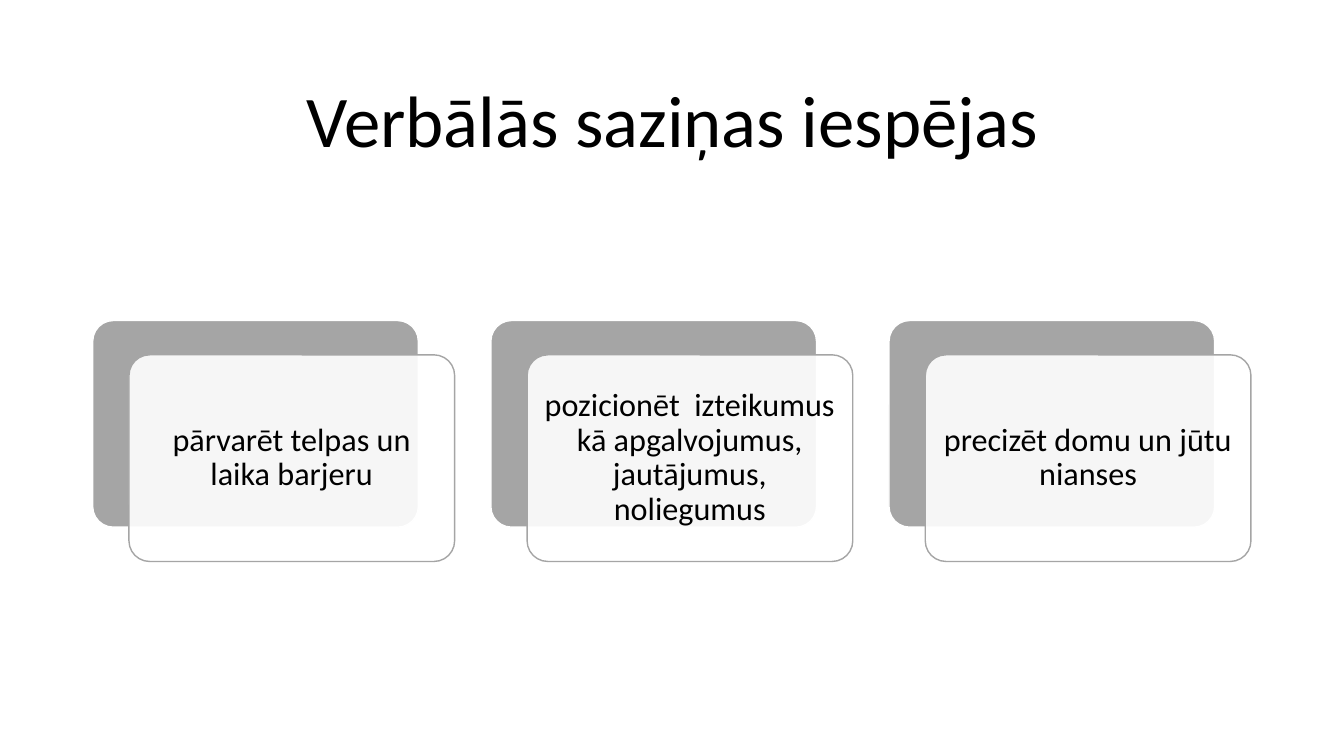
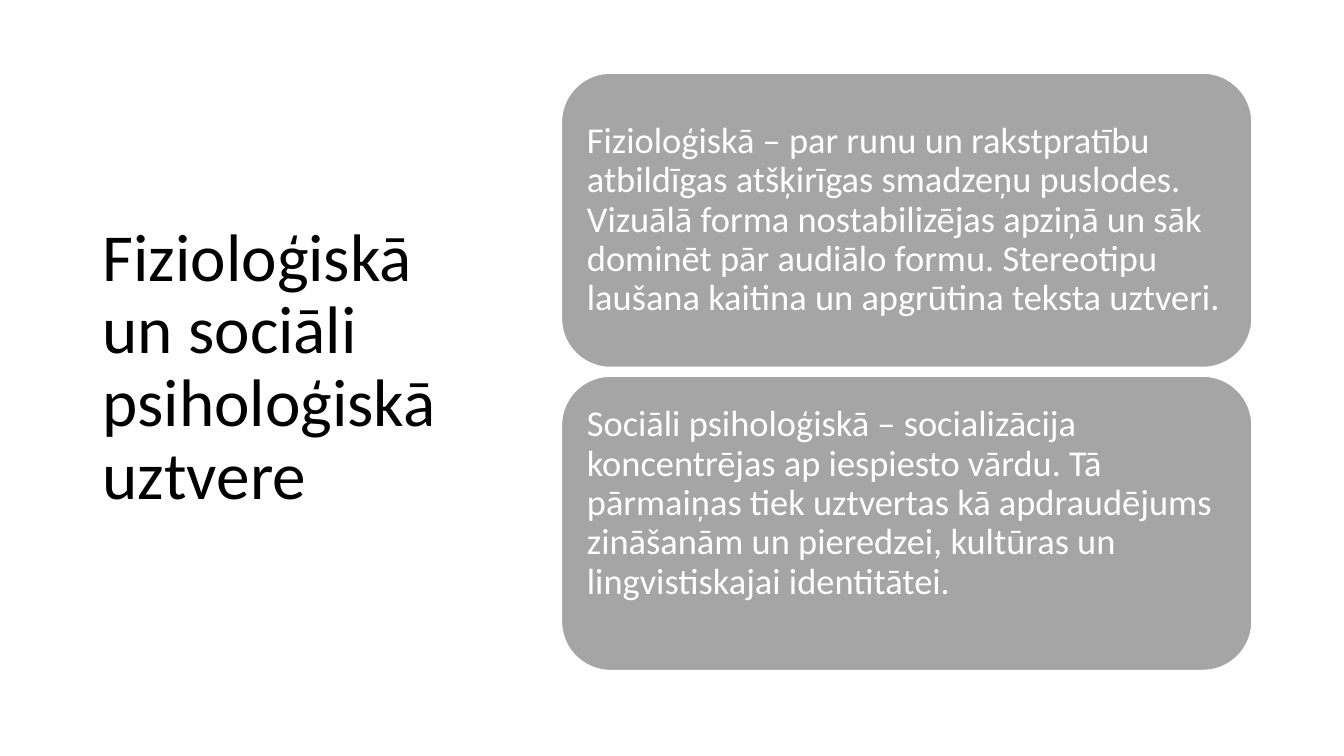
from dataclasses import dataclass

from lxml.etree import SubElement
from pptx import Presentation
from pptx.dml.color import RGBColor
from pptx.enum.shapes import MSO_SHAPE as Shape
from pptx.enum.text import MSO_ANCHOR as Anchor, PP_ALIGN as Align
from pptx.oxml.ns import qn
from pptx.util import Pt

# Shared style
COLORS = {"text": "000000", "white": "FFFFFF", "gray": "A5A5A5"}
FONT = "Calibri"
LEFT, TITLE_TOP = 66.24, 43.92


@dataclass(frozen=True)
class Box:
    x: float
    y: float
    w: float
    h: float

    def shifted(self, dx: float, dy: float) -> "Box":
        return Box(self.x + dx, self.y + dy, self.w, self.h)

    def emu(self) -> tuple:
        return Pt(self.x), Pt(self.y), Pt(self.w), Pt(self.h)


@dataclass(frozen=True)
class TextStyle:
    size: float
    color: str = "text"
    align: Align = Align.LEFT


@dataclass(frozen=True)
class Panel:
    text: str
    bottom_inset: float


def rgb(name: str) -> RGBColor:
    return RGBColor.from_string(COLORS[name])


def write(tf, text: str, style: TextStyle) -> None:
    tf.word_wrap = True
    tf.vertical_anchor = Anchor.MIDDLE
    p = tf.paragraphs[0]
    p.alignment = style.align
    p.line_spacing = 0.9
    r = p.add_run()
    r.text = text
    r.font.name = FONT
    r.font.size = Pt(style.size)
    r.font.color.rgb = rgb(style.color)


def add_title(s, text: str, box: Box, style: TextStyle) -> None:
    write(s.shapes.add_textbox(*box.emu()).text_frame, text, style)


def add_card(s, box: Box, radius: float, fill: str, line: str,
             opacity: int = 100):
    sp = s.shapes.add_shape(Shape.ROUNDED_RECTANGLE, *box.emu())
    sp.adjustments[0] = radius
    sp.shadow.inherit = False
    sp.fill.solid()
    sp.fill.fore_color.rgb = rgb(fill)
    if opacity < 100:
        color = sp.fill._xPr.find(f".//{qn('a:srgbClr')}")
        SubElement(color, qn("a:alpha"), val=str(opacity * 1000))
    sp.line.color.rgb = rgb(line)
    sp.line.width = Pt(1)
    return sp


def set_insets(tf, side: float, bottom: float) -> None:
    tf.margin_left = tf.margin_right = tf.margin_top = Pt(side)
    tf.margin_bottom = Pt(bottom)


# Slide 1: three layered cards
OPTIONS = (
    "pārvarēt telpas un laika barjeru",
    "pozicionēt  izteikumus kā apgalvojumus, jautājumus, noliegumus",
    "precizēt domu un jūtu nianses",
)
FIRST_CARD = Box(LEFT, 228.96, 232.6, 147.6)
CARD_STEP = 284.4
OVERLAP = (25.92, 24.48)


def build_options(s) -> None:
    add_title(s, "Verbālās saziņas iespējas", Box(LEFT, TITLE_TOP, 828, 89.28),
              TextStyle(52, align=Align.CENTER))
    style = TextStyle(23, align=Align.CENTER)
    for i, text in enumerate(OPTIONS):
        back = FIRST_CARD.shifted(i * CARD_STEP, 0)
        add_card(s, back, 0.1, "gray", "white")
        front = add_card(s, back.shifted(*OVERLAP), 0.1, "white", "gray", 90)
        set_insets(front.text_frame, 7.2, 7.2)
        write(front.text_frame, text, style)


# Slide 2: side title and two stacked panels
PANEL_INSET = 7.92
PANELS = (
    Panel("Fizioloģiskā – par runu un rakstpratību atbildīgas atšķirīgas "
          "smadzeņu puslodes. Vizuālā forma nostabilizējas apziņā un sāk "
          "dominēt pār audiālo formu. Stereotipu laušana kaitina un "
          "apgrūtina teksta uztveri.", PANEL_INSET),
    Panel("Sociāli psiholoģiskā – socializācija koncentrējas ap iespiesto "
          "vārdu. Tā pārmaiņas tiek uztvertas kā apdraudējums zināšanām un "
          "pieredzei, kultūras un lingvistiskajai identitātei.",
          PANEL_INSET + 28),
)
FIRST_PANEL = Box(401.04, 52.2, 493.2, 210.24)
PANEL_STEP = 216.5


def build_perception(s) -> None:
    add_title(s, "Fizioloģiskā un sociāli psiholoģiskā uztvere",
              Box(LEFT, TITLE_TOP, 265.68, 438.48), TextStyle(48))
    for i, panel in enumerate(PANELS):
        box = FIRST_PANEL.shifted(0, i * PANEL_STEP)
        sp = add_card(s, box, 0.16667, "gray", "white")
        set_insets(sp.text_frame, PANEL_INSET, panel.bottom_inset)
        write(sp.text_frame, panel.text, TextStyle(26, "white"))


def main() -> None:
    prs = Presentation()
    prs.slide_width, prs.slide_height = Pt(960), Pt(540)
    for build in (build_options, build_perception):
        build(prs.slides.add_slide(prs.slide_layouts[6]))
    prs.save("out.pptx")


if __name__ == "__main__":
    main()
